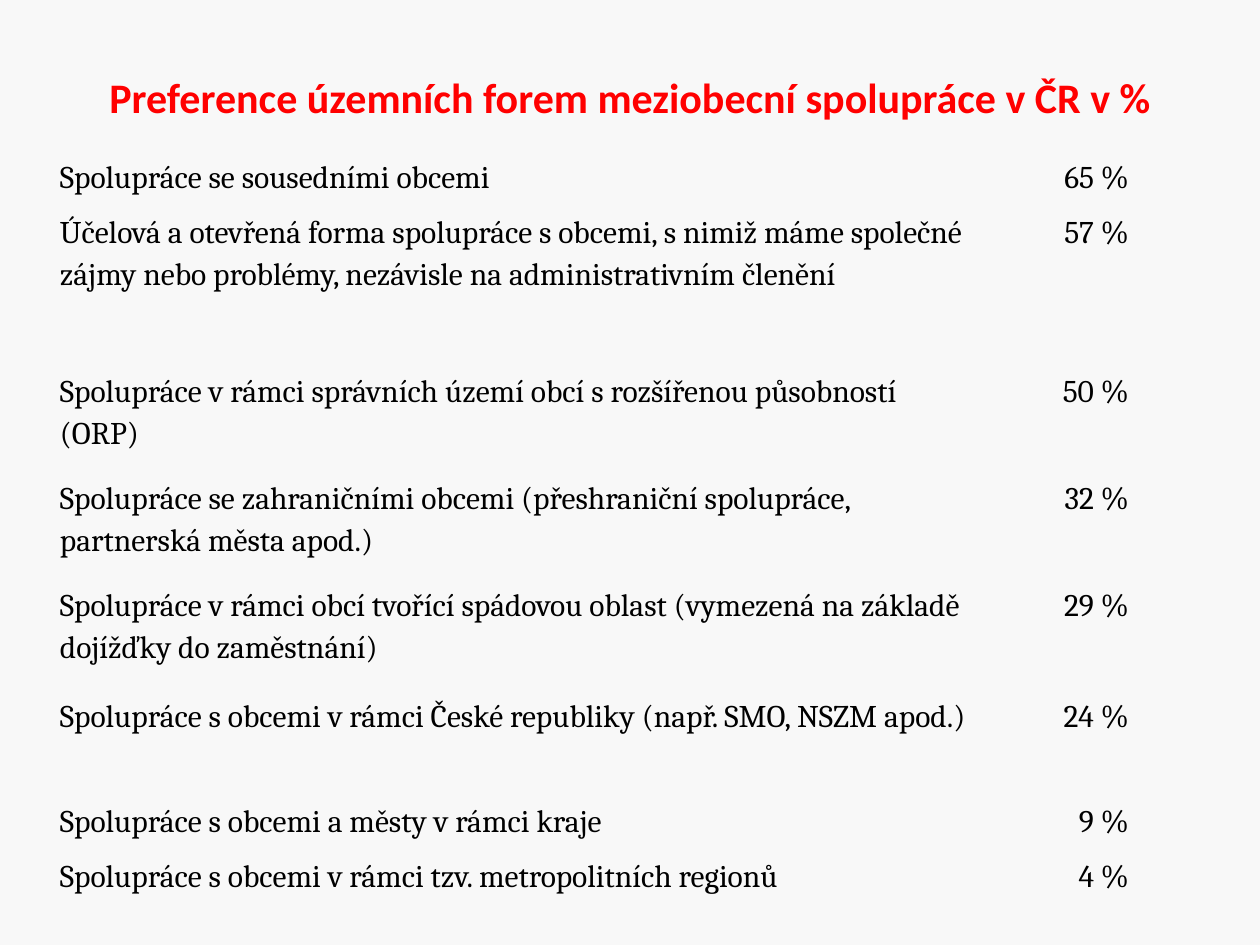
from dataclasses import dataclass

from pptx import Presentation
from pptx.dml.color import RGBColor
from pptx.enum.text import MSO_ANCHOR, PP_ALIGN
from pptx.oxml.ns import qn
from pptx.util import Emu, Pt

LEFT, CENTER, RIGHT = PP_ALIGN.LEFT, PP_ALIGN.CENTER, PP_ALIGN.RIGHT
TOP, MIDDLE = MSO_ANCHOR.TOP, MSO_ANCHOR.MIDDLE
EMU_PER_PX = 914400 / 126
TITLE_ONLY = 5
PLAIN_TABLE_STYLE = "{2D5ABB26-0587-4C30-8999-92F81FD0307C}"


@dataclass(frozen=True)
class Theme:
    background: RGBColor = RGBColor(0xF8, 0xF8, 0xF8)
    title_color: RGBColor = RGBColor(0xFF, 0x00, 0x00)
    body_color: RGBColor = RGBColor(0x00, 0x00, 0x00)
    title_size: Pt = Pt(24)
    body_size: Pt = Pt(18)
    title_font: str = "Calibri"
    body_font: str = "Cambria"


THEME = Theme()
TITLE = "Preference územních forem meziobecní spolupráce v ČR v %"
COLUMN_WIDTHS = (932, 37, 112)
PREFERENCES = (
    ("Spolupráce se sousedními obcemi", 65, 55),
    ("Účelová a otevřená forma spolupráce s obcemi, s nimiž máme společné "
     "zájmy nebo problémy, nezávisle na administrativním členění", 57, 159),
    ("Spolupráce v rámci správních území obcí s rozšířenou působností (ORP)", 50, 107),
    ("Spolupráce se zahraničními obcemi (přeshraniční spolupráce, "
     "partnerská města apod.)", 32, 107),
    ("Spolupráce v rámci obcí tvořící spádovou oblast (vymezená na základě "
     "dojížďky do zaměstnání)", 29, 111),
    ("Spolupráce s obcemi v rámci České republiky (např. SMO, NSZM apod.)", 24, 105),
    ("Spolupráce s obcemi a městy v rámci kraje", 9, 55),
    ("Spolupráce s obcemi v rámci tzv. metropolitních regionů", 4, 55),
)


def px(length):
    return Emu(round(length * EMU_PER_PX))


def apply(target, formats):
    for name, value in formats.items():
        setattr(target, name, value)


def write(frame, text, para_format, font_format, color):
    para = frame.paragraphs[0]
    apply(para, para_format)
    span = para.add_run()
    span.text = text
    apply(span.font, font_format)
    span.font.color.rgb = color


def add_title(page):
    box = page.shapes.title
    apply(box, {"left": px(63), "top": px(38), "width": px(1134), "height": px(117)})
    apply(box.text_frame, {"word_wrap": True, "vertical_anchor": MIDDLE})
    write(box.text_frame, TITLE, {"alignment": CENTER},
          {"name": THEME.title_font, "size": THEME.title_size, "bold": True},
          THEME.title_color)


def fill_cell(cell, text, alignment):
    apply(cell, {"margin_left": px(6), "margin_right": px(6), "margin_top": 0,
                 "margin_bottom": 0, "vertical_anchor": TOP})
    cell.fill.background()
    if text:
        write(cell.text_frame, text, {"alignment": alignment, "line_spacing": 1.15},
              {"name": THEME.body_font, "size": THEME.body_size}, THEME.body_color)


def add_preference_table(page):
    heights = [height for _, _, height in PREFERENCES]
    table = page.shapes.add_table(
        len(PREFERENCES), len(COLUMN_WIDTHS), px(54), px(155),
        px(sum(COLUMN_WIDTHS)), px(sum(heights))).table
    apply(table, {"first_row": False, "horz_banding": False})
    table._tbl.tblPr.find(qn("a:tableStyleId")).text = PLAIN_TABLE_STYLE
    for column, width in zip(table.columns, COLUMN_WIDTHS):
        column.width = px(width)
    for row, (form, share, height) in zip(table.rows, PREFERENCES):
        row.height = px(height)
        contents = ((form, LEFT), ("", LEFT), (f"{share} %", RIGHT))
        for cell, (text, alignment) in zip(row.cells, contents):
            fill_cell(cell, text, alignment)


def main():
    deck = Presentation()
    apply(deck, {"slide_width": px(1260), "slide_height": px(945)})
    page = deck.slides.add_slide(deck.slide_layouts[TITLE_ONLY])
    page.background.fill.solid()
    page.background.fill.fore_color.rgb = THEME.background
    add_title(page)
    add_preference_table(page)
    deck.save("out.pptx")


if __name__ == "__main__":
    main()
